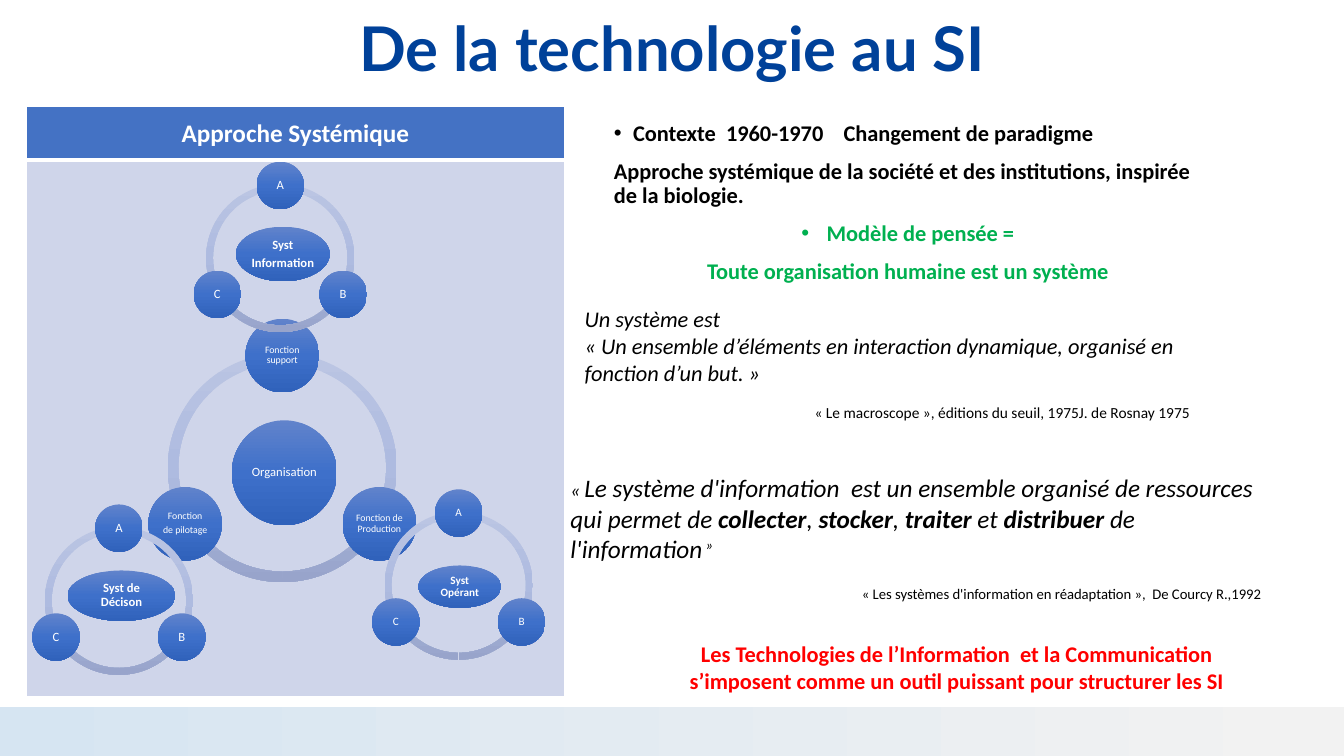
from math import cos, radians, sin

from lxml.etree import SubElement
from pptx import Presentation
from pptx.dml.color import RGBColor
from pptx.enum.shapes import MSO_SHAPE as SHAPE
from pptx.enum.text import MSO_ANCHOR as ANCHOR, PP_ALIGN as ALIGN
from pptx.oxml.ns import qn
from pptx.util import Inches, Pt

WHITE = RGBColor(0xFF, 0xFF, 0xFF)
BLACK = RGBColor(0x00, 0x00, 0x00)
TITLE_BLUE = RGBColor(0x00, 0x41, 0x99)
HEADER_BLUE = RGBColor(0x44, 0x72, 0xC4)
PANEL_BLUE = RGBColor(0xCF, 0xD5, 0xEA)
GREEN = RGBColor(0x00, 0xB0, 0x50)
RED = RGBColor(0xFF, 0x00, 0x00)
NODE_STOPS = [(0, RGBColor(0x61, 0x83, 0xCB)), (50, RGBColor(0x3E, 0x70, 0xCA)),
              (100, RGBColor(0x30, 0x62, 0xBB))]
RING_STOPS = [(0, RGBColor(0xBB, 0xC5, 0xE3)), (50, RGBColor(0xAE, 0xBB, 0xE0)),
              (100, RGBColor(0x98, 0xA4, 0xCB))]
FOOTER_STOPS = [(0, RGBColor(0xD6, 0xE5, 0xF2)), (98, RGBColor(0xF2, 0xF2, 0xF2))]

RING_ARCS = [(90, 162), (18, 90), (162, 18)]
NODE_ANGLES = [-90, 30, 150]
ORBIT_RATIO = 0.49
LETTERS = ["A", "B", "C"]


def inches(box):
    return [Inches(value) for value in box]


def around(x, y, width, height):
    return x - width / 2, y - height / 2, width, height


def add_gradient_shape(shapes, preset, box, stops, angle):
    shape = shapes.add_shape(preset, *inches(box))
    shape.shadow.inherit = False
    shape.line.fill.background()
    shape.fill.gradient()
    shape.fill.gradient_angle = angle
    stop_list = next(shape._element.spPr.iter(qn("a:gsLst")))
    for stop in list(stop_list):
        stop_list.remove(stop)
    for position, color in stops:
        stop = SubElement(stop_list, qn("a:gs"), pos=str(position * 1000))
        SubElement(stop, qn("a:srgbClr"), val=str(color))
    return shape


def style(font, size, color=BLACK, bold=False, italic=False, name="Calibri"):
    font.name = name
    font.size = Pt(size)
    font.color.rgb = color
    font.bold = bold
    font.italic = italic


def add_node(shapes, box, label, size, bold=False):
    node = add_gradient_shape(shapes, SHAPE.OVAL, box, NODE_STOPS, 270)
    frame = node.text_frame
    frame.word_wrap = True
    frame.vertical_anchor = ANCHOR.MIDDLE
    frame.margin_left = frame.margin_right = Inches(0.01)
    frame.margin_top = frame.margin_bottom = Inches(0.01)
    frame.text = label
    for paragraph in frame.paragraphs:
        paragraph.alignment = ALIGN.CENTER
        paragraph.line_spacing = 0.9
        paragraph.space_after = Pt(size * 0.35)
        for run in paragraph.runs:
            style(run.font, size, WHITE, bold)


def add_cycle(slide, center, diameter, core, core_size, bold, labels, label_size, node_size):
    shapes = slide.shapes.add_group_shape().shapes
    x, y = center
    for start, end in RING_ARCS:
        arc = add_gradient_shape(shapes, SHAPE.BLOCK_ARC, around(x, y, diameter, diameter),
                                 RING_STOPS, 270)
        arc.adjustments[0] = start * 0.6
        arc.adjustments[1] = end * 0.6
        arc.adjustments[2] = 0.046
    core_label, core_box = core
    add_node(shapes, core_box, core_label, core_size, bold)
    orbit = diameter * ORBIT_RATIO
    for label, angle in zip(labels, NODE_ANGLES):
        node_x = x + orbit * cos(radians(angle))
        node_y = y + orbit * sin(radians(angle))
        add_node(shapes, around(node_x, node_y, node_size, node_size), label, label_size)


def add_borders(cell, bottom):
    properties = cell._tc.get_or_add_tcPr()
    sides = [("a:lnL", 1), ("a:lnR", 1), ("a:lnT", 1), ("a:lnB", bottom)]
    for index, (side, width) in enumerate(sides):
        line = SubElement(properties, qn(side), w=str(Pt(width)))
        fill = SubElement(line, qn("a:solidFill"))
        SubElement(fill, qn("a:srgbClr"), val=str(WHITE))
        properties.insert(index, line)


def add_panel(slide):
    table = slide.shapes.add_table(2, 1, *inches((0.26, 1.06, 5.34, 5.85))).table
    header, body = table.cell(0, 0), table.cell(1, 0)
    rows = [(header, 0.53, HEADER_BLUE, 3), (body, 5.32, PANEL_BLUE, 1)]
    for row, (cell, height, color, bottom) in zip(table.rows, rows):
        row.height = Inches(height)
        cell.fill.solid()
        cell.fill.fore_color.rgb = color
        add_borders(cell, bottom)
    header.text = "Approche Systémique"
    header.vertical_anchor = ANCHOR.MIDDLE
    heading = header.text_frame.paragraphs[0]
    heading.alignment = ALIGN.CENTER
    style(heading.runs[0].font, 18, WHITE, True)


def add_frame(slide, box):
    frame = slide.shapes.add_textbox(*inches(box)).text_frame
    frame.word_wrap = True
    return frame


def add_text(frame, text, size, align=ALIGN.LEFT, spacing=1.0, before=0, bullet=0, **look):
    first = frame.paragraphs[0]
    paragraph = frame.add_paragraph() if first.runs else first
    paragraph.text = text
    paragraph.alignment = align
    paragraph.line_spacing = spacing
    paragraph.space_before = Pt(before)
    if bullet:
        properties = paragraph._p.get_or_add_pPr()
        properties.set("marL", str(Inches(bullet)))
        properties.set("indent", str(-Inches(bullet)))
        SubElement(properties, qn("a:buFont"), typeface="Arial")
        SubElement(properties, qn("a:buChar"), char="•")
    for run in paragraph.runs:
        style(run.font, size, **look)
    return paragraph


def add_title(slide):
    frame = add_frame(slide, (0.92, -0.21, 11.5, 1.45))
    frame.vertical_anchor = ANCHOR.MIDDLE
    add_text(frame, "De la technologie au SI", 44, ALIGN.CENTER, 0.9,
             color=TITLE_BLUE, bold=True, name="Lato")


def add_context(slide):
    frame = add_frame(slide, (5.99, 1.16, 6.03, 1.73))
    add_text(frame, "Contexte  1960-1970    Changement de paradigme", 16,
             spacing=0.9, bullet=0.19, bold=True)
    add_text(frame, "Approche systémique de la société et des institutions, inspirée "
             "de la biologie.", 16, spacing=0.9, before=10, bold=True)
    add_text(frame, "Modèle de pensée =", 16, ALIGN.CENTER, 0.9, 10, 0.25,
             color=GREEN, bold=True)
    add_text(frame, "Toute organisation humaine est un système", 16, ALIGN.CENTER, 0.9, 10,
             color=GREEN, bold=True)


def add_system_quote(slide):
    frame = add_frame(slide, (5.7, 2.98, 6.24, 1.27))
    add_text(frame, "Un système est", 16, italic=True)
    add_text(frame, "« Un ensemble d’éléments en interaction dynamique, organisé en "
             "fonction d’un but. »", 16, italic=True)
    add_text(frame, "« Le macroscope », éditions du seuil, 1975J. de Rosnay 1975 ", 11,
             ALIGN.RIGHT, before=12)


def add_information_quote(slide):
    frame = add_frame(slide, (5.56, 4.64, 7.05, 1.42))
    quote = add_text(frame, "«", 14, italic=True)
    pieces = [(" ", 12, False),
              ("Le système d'information  est un ensemble organisé de ressources "
               "qui permet de ", 18, False),
              ("collecter", 18, True), (", ", 18, False), ("stocker", 18, True),
              (", ", 18, False), ("traiter", 18, True), (" et ", 18, False),
              ("distribuer", 18, True), (" de l'information", 18, False), (" »", 18, False)]
    for text, size, bold in pieces:
        run = quote.add_run()
        run.text = text
        style(run.font, size, bold=bold, italic=True)
    quote.runs[-1]._r.get_or_add_rPr().set("baseline", "30000")
    add_text(frame, "« Les systèmes d'information en réadaptation »,  De Courcy R.,1992",
             10.5, ALIGN.RIGHT, before=15)


def add_conclusion(slide):
    frame = add_frame(slide, (6.37, 6.3, 6.24, 0.91))
    add_text(frame, "Les Technologies de l’Information  et la Communication "
             "s’imposent comme un outil puissant pour structurer les SI", 16,
             ALIGN.CENTER, color=RED, bold=True)


def main():
    deck = Presentation()
    deck.slide_width, deck.slide_height = Inches(13.33), Inches(7.5)
    slide = deck.slides.add_slide(deck.slide_layouts[6])
    add_panel(slide)
    add_title(slide)
    add_gradient_shape(slide.shapes, SHAPE.RECTANGLE, (0, 7.01, 13.33, 0.49), FOOTER_STOPS, 0)
    functions = ["Fonction support", "Fonction de Production", "Fonction\nde pilotage"]
    add_cycle(slide, (2.8, 4.64), 2.27, ("Organisation", (2.3, 4.17, 1.04, 1.04)), 9, False,
              functions, 7, 0.73)
    subsystems = [((1.18, 5.96), "Syst de Décison", (0.67, 5.66, 1.07, 0.5), 9),
                  ((4.55, 5.81), "Syst Opérant", (4.15, 5.61, 0.82, 0.42), 8),
                  ((2.78, 2.56), "Syst\nInformation", (2.34, 2.25, 0.93, 0.54), 9)]
    for center, label, box, size in subsystems:
        add_cycle(slide, center, 1.47, (label, box), size, True, LETTERS, size, 0.47)
    add_context(slide)
    add_system_quote(slide)
    add_information_quote(slide)
    add_conclusion(slide)
    deck.save("out.pptx")


if __name__ == "__main__":
    main()
